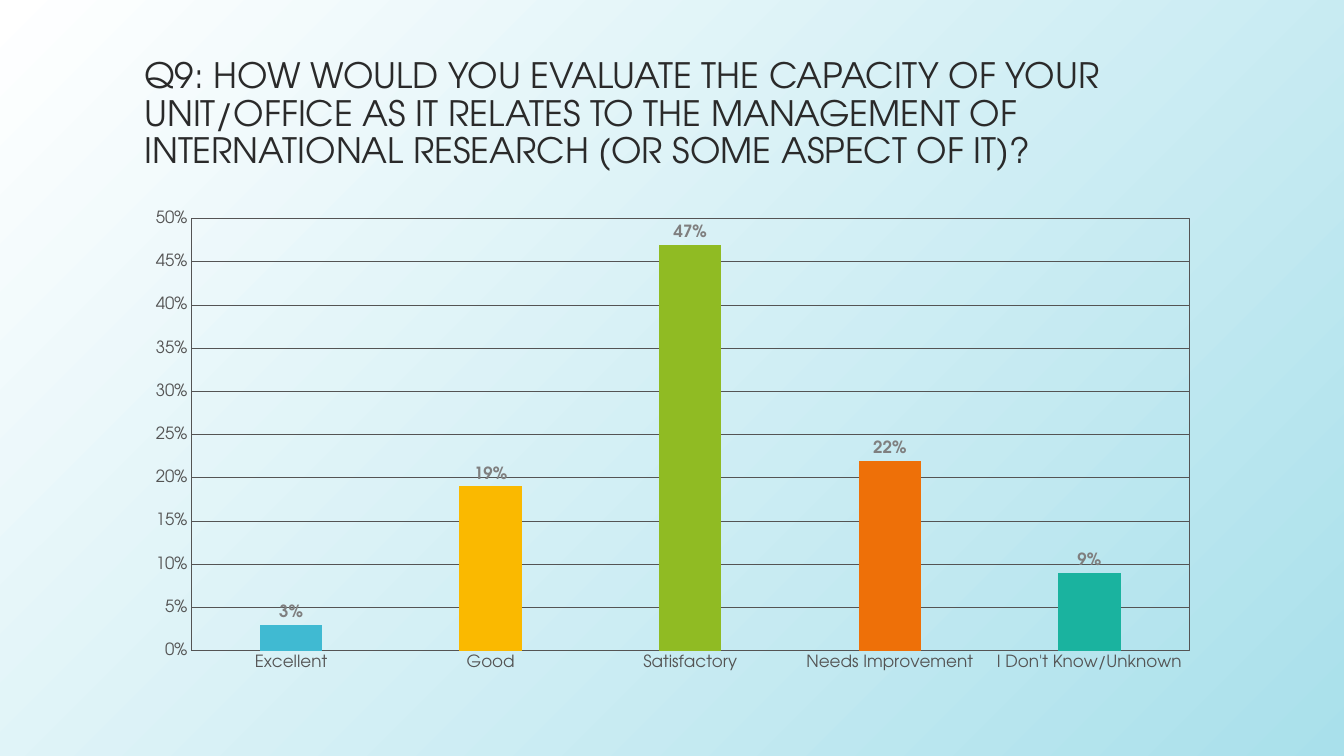
from lxml import etree
from pptx import Presentation
from pptx import util as u
from pptx.chart.data import CategoryChartData
from pptx.dml.color import RGBColor
from pptx.enum import chart as ch, text
from pptx.oxml import parse_xml
from pptx.oxml.ns import nsdecls, qn

FONT = "TeX Gyre Adventor"
WHITE = RGBColor(0xFF, 0xFF, 0xFF)
AQUA = RGBColor(0xA9, 0xE0, 0xEB)
INK = RGBColor(0x2A, 0x2A, 0x2A)
SLATE = RGBColor(0x54, 0x54, 0x54)
GRAY = RGBColor(0x7F, 0x7F, 0x7F)
STEEL = RGBColor(0x7A, 0x7A, 0x7A)
BLUE = RGBColor(0x40, 0xBA, 0xD2)
GOLD = RGBColor(0xFA, 0xB9, 0x00)
GREEN = RGBColor(0x90, 0xBB, 0x23)
ORANGE = RGBColor(0xEE, 0x70, 0x08)
TEAL = RGBColor(0x1A, 0xB3, 0x9F)

WIDE, HIGH = u.Inches(13.33), u.Inches(7.5)
TITLE = ("Q9: HOW WOULD YOU EVALUATE THE CAPACITY OF YOUR UNIT/OFFICE "
         "AS IT RELATES TO THE MANAGEMENT OF INTERNATIONAL RESEARCH "
         "(OR SOME ASPECT OF IT)?")
ANSWERS = [
    ("Excellent", 0.03, BLUE),
    ("Good", 0.19, GOLD),
    ("Satisfactory", 0.47, GREEN),
    ("Needs Improvement", 0.22, ORANGE),
    ("I Don't Know/Unknown", 0.09, TEAL),
]
# Inner plot area, as shares of the chart's box
PLOT = {"x": 0.053, "y": 0.036, "w": 0.928, "h": 0.902}


def style(font, size, color, bold=False):
    font.name, font.size, font.bold = FONT, u.Pt(size), bold
    font.color.rgb = color


def paint(slide):
    fill = slide.background.fill
    fill.gradient()
    fill.gradient_angle = 315
    for stop, color in zip(fill.gradient_stops, (WHITE, AQUA)):
        stop.color.rgb = color


def add_title(slide, box):
    frame = slide.shapes.add_textbox(*box).text_frame
    frame.word_wrap = True
    frame.vertical_anchor = text.MSO_ANCHOR.BOTTOM
    para = frame.paragraphs[0]
    para.line_spacing = 0.9
    run = para.add_run()
    run.text = TITLE
    style(run.font, 25, INK)


def frame_plot(chart):
    """Fix the plot area inside the chart and outline it."""
    area = chart.plots[0]._element.getparent()
    for old in area.findall(qn("c:layout")):
        area.remove(old)
    layout = parse_xml(f"<c:layout {nsdecls('c')}><c:manualLayout/></c:layout>")
    marks = [("layoutTarget", "inner"), ("xMode", "edge"), ("yMode", "edge")]
    for name, val in marks + list(PLOT.items()):
        etree.SubElement(layout[0], qn(f"c:{name}")).set("val", str(val))
    area.insert(0, layout)
    area.append(parse_xml(
        f"<c:spPr {nsdecls('c', 'a')}><a:noFill/><a:ln w=\"{u.Pt(0.75)}\">"
        f"<a:solidFill><a:srgbClr val=\"{SLATE}\"/></a:solidFill></a:ln></c:spPr>"))


def add_bars(slide, box):
    data = CategoryChartData(number_format="0%")
    data.categories = [name for name, _, _ in ANSWERS]
    data.add_series("Series 1", [share for _, share, _ in ANSWERS])
    chart = slide.shapes.add_chart(
        ch.XL_CHART_TYPE.COLUMN_CLUSTERED, *box, data).chart
    chart.has_legend = chart.has_title = False
    style(chart.font, 10, SLATE)

    # Axes
    cat, val = chart.category_axis, chart.value_axis
    for axis in (cat, val):
        axis.major_tick_mark = axis.minor_tick_mark = ch.XL_TICK_MARK.NONE
        style(axis.tick_labels.font, 12, SLATE)
    cat.format.line.color.rgb = SLATE
    cat.format.line.width = u.Pt(1)
    val.minimum_scale, val.maximum_scale, val.major_unit = 0, 0.5, 0.05
    val.tick_labels.number_format = "0%"
    val.tick_labels.number_format_is_linked = False
    val.format.line.fill.background()
    grid = val.major_gridlines.format.line
    grid.color.rgb, grid.width = SLATE, u.Pt(0.75)

    # Columns and their labels
    plot = chart.plots[0]
    plot.gap_width, plot.overlap, plot.vary_by_categories = 219, -27, False
    series = plot.series[0]
    series.format.fill.solid()
    series.format.fill.fore_color.rgb = STEEL
    for i, (_, _, color) in enumerate(ANSWERS):
        fill = series.points[i].format.fill
        fill.solid()
        fill.fore_color.rgb = color
    labels = series.data_labels
    labels.show_value = True
    labels.number_format, labels.number_format_is_linked = "0%", False
    labels.position = ch.XL_LABEL_POSITION.OUTSIDE_END
    style(labels.font, 12, GRAY, bold=True)
    frame_plot(chart)


def main():
    prs = Presentation()
    prs.slide_width, prs.slide_height = WIDE, HIGH
    slide = prs.slides.add_slide(prs.slide_layouts[6])
    paint(slide)
    left, width = int(WIDE * 0.1), int(WIDE * 0.8)
    add_title(slide, (left, int(HIGH * 0.04), width, u.Inches(1.45)))
    add_bars(slide, (left, u.Inches(2), width, u.Inches(4.75)))
    prs.save("out.pptx")


if __name__ == "__main__":
    main()
